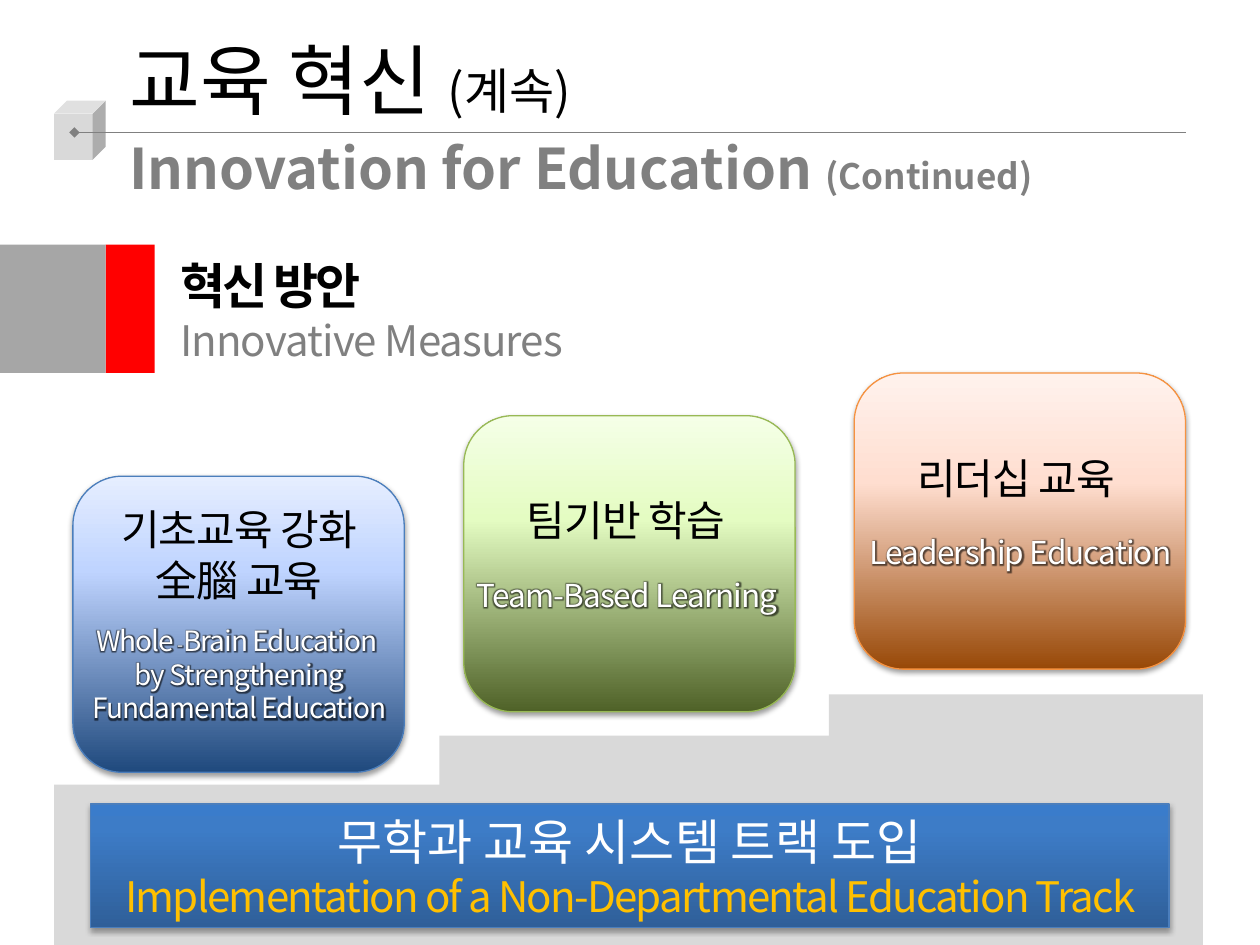
"""Build the slide on innovative measures in education."""
from copy import deepcopy

from lxml import etree
from pptx import Presentation
from pptx import util as u
from pptx.dml.color import RGBColor
from pptx.enum import shapes, text
from pptx.oxml.ns import qn

FONT = "Noto Sans CJK KR"
KINDS = shapes.MSO_SHAPE


def add_block(kind, box, fill, outline=None, shade=None):
    block = slide.shapes.add_shape(kind, *map(u.Cm, box))
    block.shadow.inherit = False
    if isinstance(fill, str):
        block.fill.solid()
        block.fill.fore_color.rgb = RGBColor.from_string(fill)
    else:
        block.fill.gradient()
        block.fill.gradient_angle = 90
        first = block._element.spPr.find(".//" + qn("a:gs"))
        first.addnext(deepcopy(first))
        for stop, (position, color) in zip(block.fill.gradient_stops, fill):
            stop.position = position
            stop.color.rgb = RGBColor.from_string(color)
    if outline:
        block.line.color.rgb = RGBColor.from_string(outline)
        block.line.width = u.Pt(0.75)
    else:
        block.line.fill.background()
    if shade:
        effects = block._element.spPr.find(qn("a:effectLst"))
        shadow = etree.SubElement(effects, qn("a:outerShdw"), blurRad="39400", dist="20300",
                                  dir="5400000", rotWithShape="0")
        black = etree.SubElement(shadow, qn("a:srgbClr"), val="000000")
        etree.SubElement(black, qn("a:alpha"), val=str(shade * 1000))
    return block


def write(frame, lines, align=text.PP_ALIGN.LEFT, glow=False):
    frame.word_wrap = True
    for index, (pieces, color, bold, spacing) in enumerate(lines):
        paragraph = frame.paragraphs[0] if index == 0 else frame.add_paragraph()
        paragraph.alignment = align
        fonts = [paragraph.font]
        for words, size in pieces:
            run = paragraph.add_run()
            run.text = words
            run.font.size = u.Pt(size)
            fonts.append(run.font)
        for font in fonts:
            font.name = FONT
            font.bold = bold
            font.color.rgb = RGBColor.from_string(color)
            props = font._element
            props.set("spc", str(int(spacing * 100)))
            if glow:
                effects = etree.Element(qn("a:effectLst"))
                halo = etree.SubElement(effects, qn("a:glow"), rad="50800")
                black = etree.SubElement(halo, qn("a:srgbClr"), val="000000")
                etree.SubElement(black, qn("a:alpha"), val="60000")
                props.find(qn("a:solidFill")).addnext(effects)
            east = etree.Element(qn("a:ea"), typeface=FONT)
            props.find(qn("a:latin")).addnext(east)


deck = Presentation()
deck.slide_width, deck.slide_height = u.Cm(25.4), u.Cm(19.05)
slide = deck.slides.add_slide(deck.slide_layouts[6])

title = slide.shapes.add_textbox(u.Cm(2.36), u.Cm(0.53), u.Cm(25.65), u.Cm(2.13)).text_frame
write(title, [([("교육 혁신 ", 44), ("(계속)", 28)], "000000", False, 0)])
subtitle = slide.shapes.add_textbox(u.Cm(2.36), u.Cm(3), u.Cm(19.15), u.Cm(1.19)).text_frame
write(subtitle, [([("Innovation for Education ", 32), ("(Continued)", 20)], "808080", True, 0)])
subtitle.paragraphs[0].line_spacing = u.Pt(26)

add_block(KINDS.CUBE, (1.09, 2.03, 1.04, 1.19), "D9D9D9")
rule = slide.shapes.add_connector(shapes.MSO_CONNECTOR.STRAIGHT,
                                  u.Cm(1.5), u.Cm(2.67), u.Cm(23.9), u.Cm(2.67))
rule.line.color.rgb = RGBColor.from_string("808080")
rule.line.width = u.Pt(0.75)
etree.SubElement(rule.line._get_or_add_ln(), qn("a:headEnd"), type="diamond")
etree.SubElement(rule._element.spPr, qn("a:effectLst"))

measures = [
    (1.47, 9.6, ("1F497D", 0.68, "BFD4FF", "E6EEFF"), "4B7EBC",
     0.43, ["기초교육 강화", "全腦 교육"], 2.85,
     [[("Whole", 16), (" -", 10), ("Brain", 16), (" ", 10), ("Education ", 16)],
      [("by Strengthening", 16)], [("Fundamental Education", 16)]]),
    (9.35, 8.38, ("4F6228", 0.65, "E4FCC2", "F5FFE7"), "98B955",
     1.47, ["팀기반 학습 "], 3.1, [[("Team-Based Learning ", 18)]]),
    (17.22, 7.52, ("984807", 0.63, "FFDED0", "FFF2ED"), "F69240",
     1.47, ["리더십 교육 "], 3.1, [[("Leadership Education", 18)]]),
]
for left, top, (dark, middle, pale, light), outline, drop, korean, gap, english in measures:
    add_block(KINDS.ROUNDED_RECTANGLE, (left, top, 6.68, 5.97),
              [(0, dark), (middle, pale), (1, light)], outline, 38)
    name = slide.shapes.add_textbox(u.Cm(left - 1.12), u.Cm(top + drop), u.Cm(8.94),
                                    u.Cm(0.23 + 1.04 * len(korean)))
    write(name.text_frame, [([(words, 24)], "000000", False, -0.5) for words in korean],
          text.PP_ALIGN.CENTER)
    gloss = slide.shapes.add_textbox(u.Cm(left - 0.48), u.Cm(top + gap), u.Cm(7.67),
                                     u.Cm(0.35 + 0.65 * len(english)))
    write(gloss.text_frame, [(pieces, "FFFFFF", False, -0.5) for pieces in english],
          text.PP_ALIGN.CENTER, glow=True)

for step in [(1.09, 15.82, 23.16, 3.23), (8.86, 14.83, 15.04, 2.87), (16.71, 14, 7.54, 2.87)]:
    add_block(KINDS.RECTANGLE, step, "D9D9D9")
track = add_block(KINDS.RECTANGLE, (1.83, 16.21, 21.74, 2.49),
                  [(0, "2F5F99"), (0.8, "3D7CC7"), (1, "3A7CCB")], "4B7EBC", 35).text_frame
track.vertical_anchor = text.MSO_ANCHOR.MIDDLE
write(track, [([("무학과 교육 시스템 트랙 도입", 28)], "FFFFFF", False, 0),
              ([("Implementation of a Non-Departmental Education Track", 24)],
               "FFC000", False, -1)], text.PP_ALIGN.CENTER)

heading = slide.shapes.add_textbox(u.Cm(3.38), u.Cm(5.03), u.Cm(15.75), u.Cm(2.49)).text_frame
write(heading, [([("혁신 방안", 28)], "000000", True, -1.5),
                ([("Innovative Measures", 24)], "808080", False, -0.5)])
add_block(KINDS.RECTANGLE, (2.13, 4.93, 0.99, 2.59), "FF0000")
add_block(KINDS.RECTANGLE, (0, 4.93, 2.13, 2.59), "A6A6A6")

deck.save("out.pptx")
